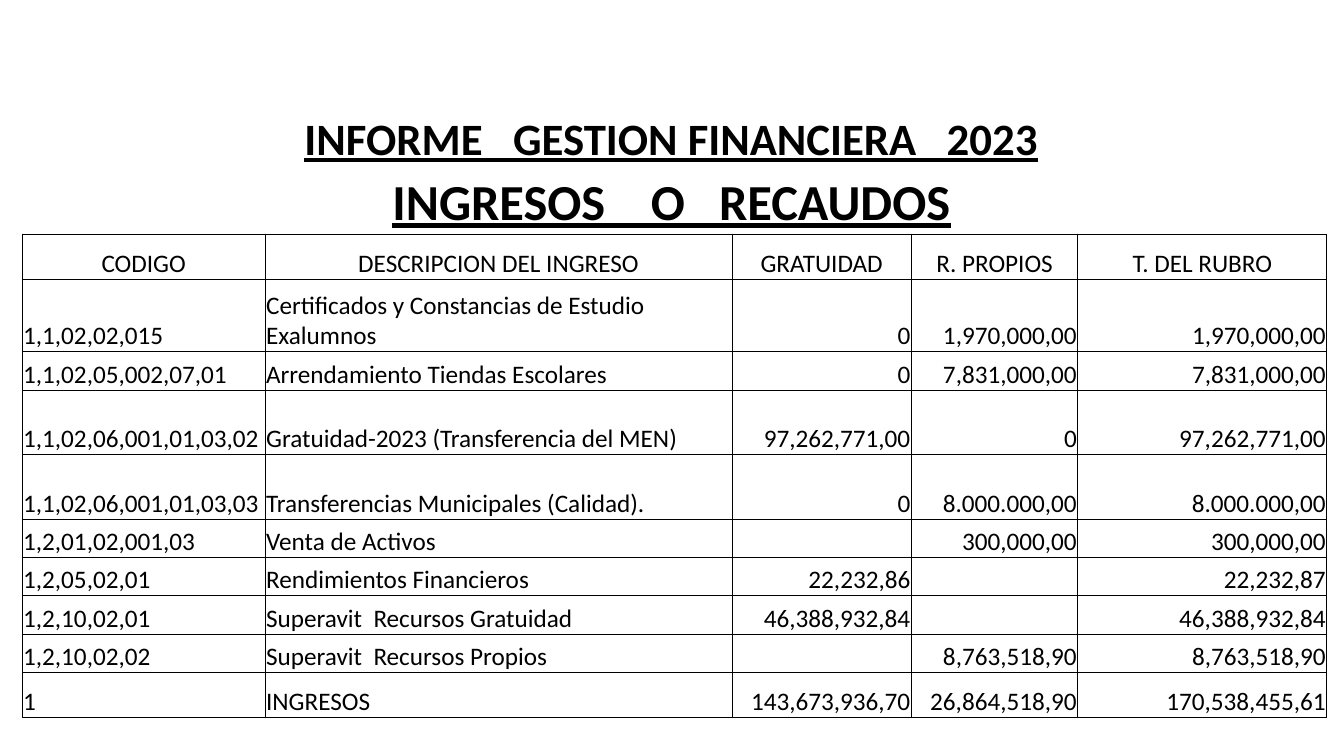
from lxml import etree
from pptx import Presentation
from pptx.dml.color import RGBColor
from pptx.enum import text
from pptx.oxml import ns
from pptx.util import Inches, Pt

BLACK = "000000"
LEFT, CENTER, RIGHT = text.PP_ALIGN.LEFT, text.PP_ALIGN.CENTER, text.PP_ALIGN.RIGHT
NO_STYLE = "{2D5ABB26-0587-4C30-8999-92F81FD0307C}"

TITLES = [("INFORME   GESTION FINANCIERA   2023", 32), ("INGRESOS    O   RECAUDOS", 36)]
HEADINGS = ["CODIGO", "DESCRIPCION DEL INGRESO", "GRATUIDAD", "R. PROPIOS", "T. DEL RUBRO"]
INCOME = [
    ["1,1,02,02,015", "Certificados y Constancias de Estudio Exalumnos", "0", "1,970,000,00", "1,970,000,00"],
    ["1,1,02,05,002,07,01", "Arrendamiento Tiendas Escolares", "0", "7,831,000,00", "7,831,000,00"],
    ["1,1,02,06,001,01,03,02", "Gratuidad-2023 (Transferencia del MEN)", "97,262,771,00", "0", "97,262,771,00"],
    ["1,1,02,06,001,01,03,03", "Transferencias Municipales (Calidad).", "0", "8.000.000,00", "8.000.000,00"],
    ["1,2,01,02,001,03", "Venta de Activos", "", "300,000,00", "300,000,00"],
    ["1,2,05,02,01", "Rendimientos Financieros", "22,232,86", "", "22,232,87"],
    ["1,2,10,02,01", "Superavit  Recursos Gratuidad", "46,388,932,84", "", "46,388,932,84"],
    ["1,2,10,02,02", "Superavit  Recursos Propios", "", "8,763,518,90", "8,763,518,90"],
    ["1", "INGRESOS", "143,673,936,70", "26,864,518,90", "170,538,455,61"],
]
COLUMN_WIDTHS = [2.41, 4.63, 1.78, 1.65, 2.47]
ROW_HEIGHTS = [1.27, 0.66, 0.45, 0.72, 0.38, 0.64, 0.64, 0.38, 0.38, 0.38, 0.38, 0.45]


def write(cell, words, size=18, align=LEFT, bold=False, underline=False, color=BLACK):
    para = cell.text_frame.paragraphs[0]
    para.alignment = align
    if words:
        span = para.add_run()
        span.text = words
        font = span.font
        font.name, font.size, font.bold, font.underline = "Calibri", Pt(size), bold, underline
        font.color.rgb = RGBColor.from_string(color)


def draw_borders(cell, sides, color=BLACK):
    """Draw half-point lines on the sides, listed in the order L, R, T, B."""
    properties = cell._tc.get_or_add_tcPr()
    for index, side in enumerate(sides):
        line = etree.Element(ns.qn(f"a:ln{side}"), w=str(Pt(0.5)))
        fill = etree.SubElement(line, ns.qn("a:solidFill"))
        etree.SubElement(fill, ns.qn("a:srgbClr"), val=color)
        properties.insert(index, line)


deck = Presentation()
deck.slide_width, deck.slide_height = Inches(13.33), Inches(7.5)
page = deck.slides.add_slide(deck.slide_layouts[6])

frame = page.shapes.add_table(len(ROW_HEIGHTS), len(COLUMN_WIDTHS), Inches(0.22), Inches(0.39),
                              Inches(sum(COLUMN_WIDTHS)), Inches(sum(ROW_HEIGHTS)))
table = frame.table
table.first_row = table.horz_banding = False
table._tbl.tblPr.find(ns.qn("a:tableStyleId")).text = NO_STYLE
for column, width in zip(table.columns, COLUMN_WIDTHS):
    column.width = Inches(width)
for row, height in zip(table.rows, ROW_HEIGHTS):
    row.height = Inches(height)

for cell in table.iter_cells():
    cell.fill.background()
    cell.vertical_anchor = text.MSO_ANCHOR.BOTTOM
    cell.margin_left = cell.margin_right = cell.margin_top = Inches(0.01)
    cell.margin_bottom = 0

for row, (title, size) in enumerate(TITLES):
    table.cell(row, 1).merge(table.cell(row, 3))
    write(table.cell(row, 1), title, size=size, align=CENTER, bold=True, underline=True)
for cell in table.rows[1].cells:
    draw_borders(cell, "B")

for row, entries in enumerate([HEADINGS] + INCOME, start=len(TITLES)):
    for column, words in enumerate(entries):
        cell = table.cell(row, column)
        if entries is HEADINGS:
            align = CENTER
        else:
            align = LEFT if column < 2 else RIGHT
        write(cell, words, align=align)
        draw_borders(cell, "LRTB")

deck.save("out.pptx")
